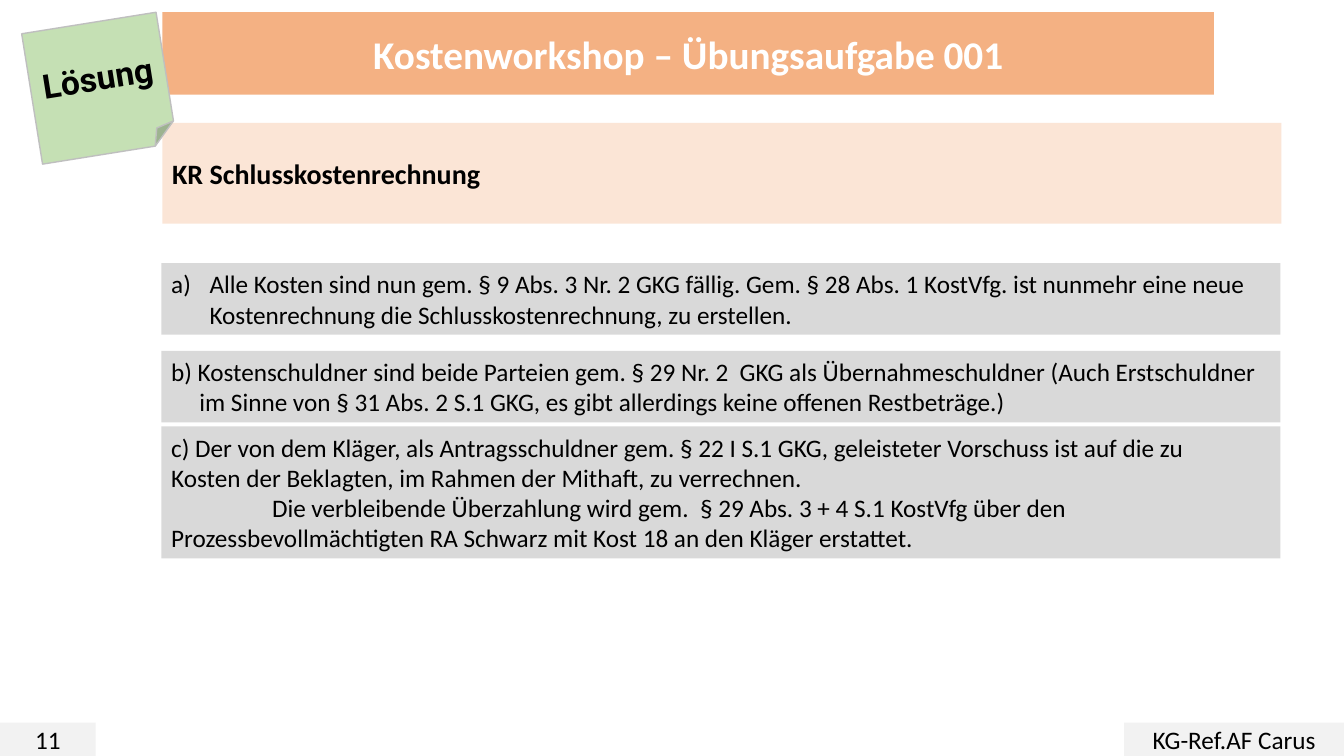
from lxml.etree import SubElement
from pptx import Presentation
from pptx.dml.color import RGBColor
from pptx.enum.shapes import MSO_SHAPE
from pptx.enum.text import MSO_ANCHOR, MSO_AUTO_SIZE, PP_ALIGN
from pptx.oxml.ns import qn
from pptx.util import Inches, Pt

WHITE = RGBColor(0xFF, 0xFF, 0xFF)
BLACK = RGBColor(0x00, 0x00, 0x00)
ORANGE = RGBColor(0xF4, 0xB1, 0x83)
PEACH = RGBColor(0xFB, 0xE5, 0xD6)
GREEN = RGBColor(0xC5, 0xE0, 0xB4)
GREY = RGBColor(0xD9, 0xD9, 0xD9)
PALE = RGBColor(0xF2, 0xF2, 0xF2)
EDGE = RGBColor(0xBF, 0xBF, 0xBF)

BODY = {"size": Pt(18), "name": "Calibri", "bold": False}
HEADING = {"size": Pt(20), "name": "Calibri", "bold": True}
TITLE = {"size": Pt(28), "name": "Calibri", "bold": True}
NOTE = {"size": Pt(24), "name": "Roboto", "bold": True}


def write(sp, paragraphs, font, color=BLACK, align=PP_ALIGN.LEFT):
    tf = sp.text_frame
    tf.word_wrap = True
    tf.auto_size = MSO_AUTO_SIZE.NONE
    tf.vertical_anchor = MSO_ANCHOR.MIDDLE
    for i, (text, margin, indent) in enumerate(paragraphs):
        p = tf.paragraphs[0] if i == 0 else tf.add_paragraph()
        p.text = text
        p.alignment = align
        pPr = p._p.get_or_add_pPr()
        pPr.set("marL", str(Inches(margin)))
        pPr.set("indent", str(Inches(indent)))
        for r in p.runs:
            for key, value in font.items():
                setattr(r.font, key, value)
            r.font.color.rgb = color


def add_box(shape, at, fill, paragraphs, font, align=PP_ALIGN.LEFT):
    sp = s.shapes.add_shape(shape, *[Inches(v) for v in at])
    sp.shadow.inherit = False
    sp.fill.solid()
    sp.fill.fore_color.rgb = fill
    sp.line.fill.background()
    write(sp, paragraphs, font, align=align)
    return sp


prs = Presentation()
prs.slide_width, prs.slide_height = Inches(13.33), Inches(7.5)
s = prs.slides.add_slide(prs.slide_layouts[5])

title = s.shapes.title
title.left, title.top = Inches(1.61), Inches(0.12)
title.width, title.height = Inches(10.43), Inches(0.82)
geom = SubElement(title._element.spPr, qn("a:prstGeom"), prst="roundRect")
SubElement(geom, qn("a:avLst"))
title.fill.solid()
title.fill.fore_color.rgb = ORANGE
write(title, [("Kostenworkshop – Übungsaufgabe 001", 0, 0)], TITLE, WHITE, PP_ALIGN.CENTER)

add_box(MSO_SHAPE.RECTANGLE, (1.61, 1.22, 11.1, 1), PEACH,
        [("KR Schlusskostenrechnung", 0, 0)], HEADING)

note = add_box(MSO_SHAPE.FOLDED_CORNER, (0.31, 0.22, 1.35, 1.31), GREEN,
               [("Lösung", 0, 0)], NOTE, PP_ALIGN.CENTER)
note.rotation = 350.9
note.line.color.rgb = EDGE
note.line.width = Pt(1)

answers = [
    (2.61, 0.71, [
        ("Alle Kosten sind nun gem. § 9 Abs. 3 Nr. 2 GKG fällig. Gem. § 28 Abs. 1 KostVfg. "
         "ist nunmehr eine neue Kostenrechnung die Schlusskostenrechnung, zu erstellen.", 0.38, -0.38),
    ]),
    (3.48, 0.71, [
        ("b) Kostenschuldner sind beide Parteien gem. § 29 Nr. 2  GKG als Übernahmeschuldner "
         "(Auch Erstschuldner", 0, 0),
        ("im Sinne von § 31 Abs. 2 S.1 GKG, es gibt allerdings keine offenen Restbeträge.)", 0.28, 0),
    ]),
    (4.23, 1.31, [
        ("c) Der von dem Kläger, als Antragsschuldner gem. § 22 I S.1 GKG, geleisteter Vorschuss "
         "ist auf die zu\vKosten der Beklagten, im Rahmen der Mithaft, zu verrechnen.", 0, 0),
        ("Die verbleibende Überzahlung wird gem.  § 29 Abs. 3 + 4 S.1 KostVfg über den "
         "Prozessbevollmächtigten RA Schwarz mit Kost 18 an den Kläger erstattet.", 0, 1),
    ]),
]
boxes = [add_box(MSO_SHAPE.RECTANGLE, (1.6, top, 11.1, height), GREY, paragraphs, BODY)
         for top, height, paragraphs in answers]
first_pPr = boxes[0].text_frame.paragraphs[0]._p.get_or_add_pPr()
SubElement(first_pPr, qn("a:buFont"), typeface="+mj-lt")
SubElement(first_pPr, qn("a:buAutoNum"), type="alphaLcParenR")

for left, width, text in [(0, 0.95, "11"), (11.15, 2.18, "KG-Ref.AF Carus")]:
    add_box(MSO_SHAPE.RECTANGLE, (left, 7.17, width, 0.33), PALE,
            [(text, 0, 0)], BODY, PP_ALIGN.CENTER)

prs.save("out.pptx")
